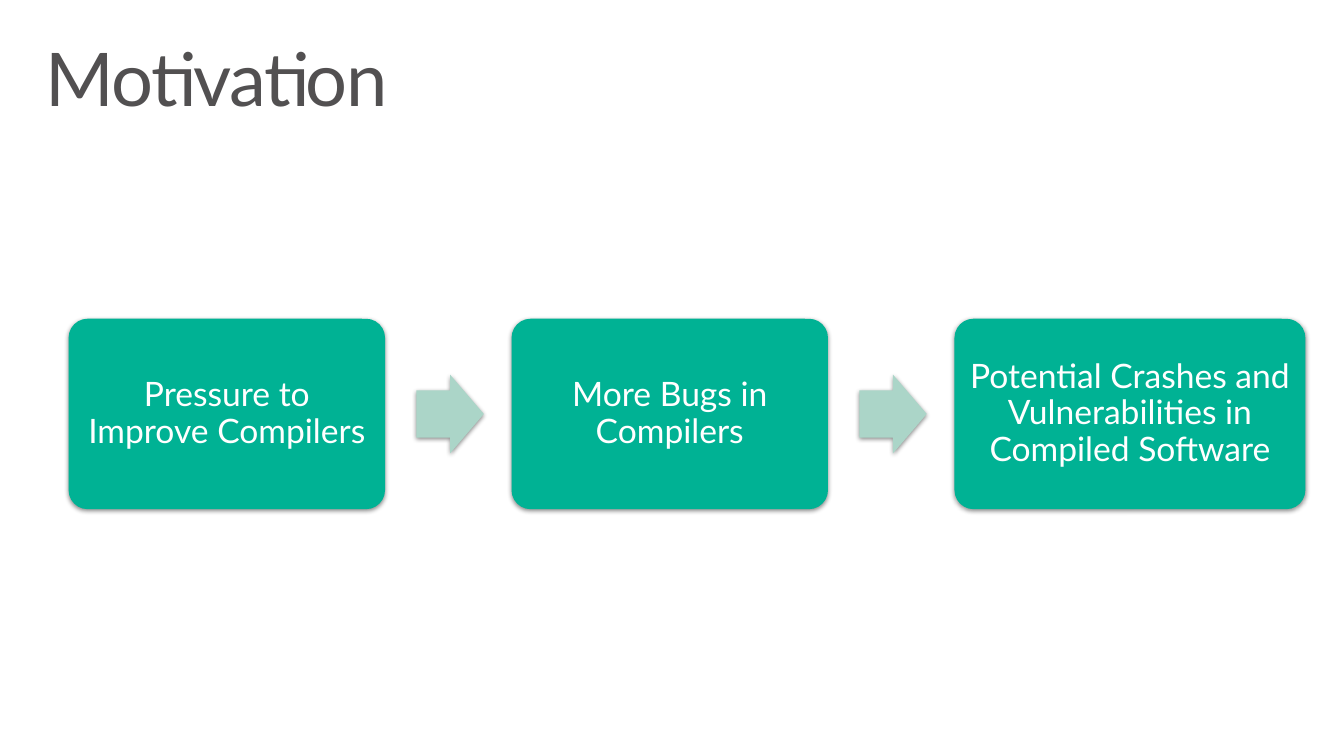
from dataclasses import dataclass

import lxml.etree
import pptx
import pptx.dml.color
import pptx.enum.shapes
import pptx.enum.text
import pptx.oxml.ns
import pptx.util

Pt = pptx.util.Pt
RGB = pptx.dml.color.RGBColor
Kind = pptx.enum.shapes.MSO_SHAPE
qn = pptx.oxml.ns.qn

WHITE = RGB(0xFF, 0xFF, 0xFF)
GREY = RGB(0x52, 0x50, 0x51)
GREEN = RGB(0x00, 0xB2, 0x94)
MINT = RGB(0xAB, 0xD5, 0xC8)
FONT = "Lato"

# Flow layout, in points
LEFT, MID = 49, 295.7
STEP = 316.4
HIGH = 136
ARROW_GAP = 22.4
ARROW_W, ARROW_H = 48.2, 56.2


@dataclass
class Card:
    text: str
    width: float


CARDS = [
    Card("Pressure to Improve Compilers", 226),
    Card("More Bugs in Compilers", 226),
    Card("Potential Crashes and Vulnerabilities in Compiled Software", 250.6),
]


def style(para, size: float, color: RGB) -> None:
    para.line_spacing = 0.9
    para.font.name = FONT
    para.font.size = Pt(size)
    para.font.color.rgb = color


def inset(frame, side: float, edge: float) -> None:
    frame.word_wrap = True
    frame.margin_left = frame.margin_right = Pt(side)
    frame.margin_top = frame.margin_bottom = Pt(edge)


def add_shade(shape) -> None:
    """Soft black shadow straight below the shape."""
    shape.shadow.inherit = False
    effects = shape.element.spPr.find(qn("a:effectLst"))
    shade = lxml.etree.SubElement(
        effects, qn("a:outerShdw"), blurRad=str(Pt(3.5)), dist=str(Pt(1.1)),
        dir="5400000", algn="ctr", rotWithShape="0")
    black = lxml.etree.SubElement(shade, qn("a:srgbClr"), val="000000")
    lxml.etree.SubElement(black, qn("a:alpha"), val="45000")


def add_block(slide, kind: Kind, x: float, width: float, height: float,
              fill: RGB, adjust: float):
    """Filled shape centred on the flow's middle line."""
    shape = slide.shapes.add_shape(
        kind, Pt(x), Pt(MID - height / 2), Pt(width), Pt(height))
    shape.fill.solid()
    shape.fill.fore_color.rgb = fill
    shape.line.fill.background()
    shape.adjustments[0] = adjust
    add_shade(shape)
    return shape


def add_card(slide, card: Card, x: float) -> None:
    shape = add_block(slide, Kind.ROUNDED_RECTANGLE, x, card.width, HIGH,
                      GREEN, 0.1)
    frame = shape.text_frame
    inset(frame, 7.2, 7.2)
    frame.vertical_anchor = pptx.enum.text.MSO_ANCHOR.MIDDLE
    para = frame.paragraphs[0]
    para.text = card.text
    para.alignment = pptx.enum.text.PP_ALIGN.CENTER
    style(para, 24, WHITE)


def add_title(slide, text: str) -> None:
    box = slide.shapes.add_textbox(Pt(21), Pt(23), Pt(918), Pt(70.6))
    inset(box.text_frame, 11.5, 7.2)
    para = box.text_frame.paragraphs[0]
    para.text = text
    style(para, 52.9, GREY)
    # Tighten the letters by one point
    para.runs[0].font._element.set("spc", "-100")


def main() -> None:
    deck = pptx.Presentation()
    deck.slide_width, deck.slide_height = Pt(960), Pt(540)
    slide = deck.slides.add_slide(deck.slide_layouts[6])

    add_title(slide, "Motivation")

    # Cards, with an arrow after each but the last
    for i, card in enumerate(CARDS):
        x = LEFT + i * STEP
        add_card(slide, card, x)
        if i < len(CARDS) - 1:
            add_block(slide, Kind.RIGHT_ARROW, x + card.width + ARROW_GAP,
                      ARROW_W, ARROW_H, MINT, 0.6)

    deck.save("out.pptx")


if __name__ == "__main__":
    main()
